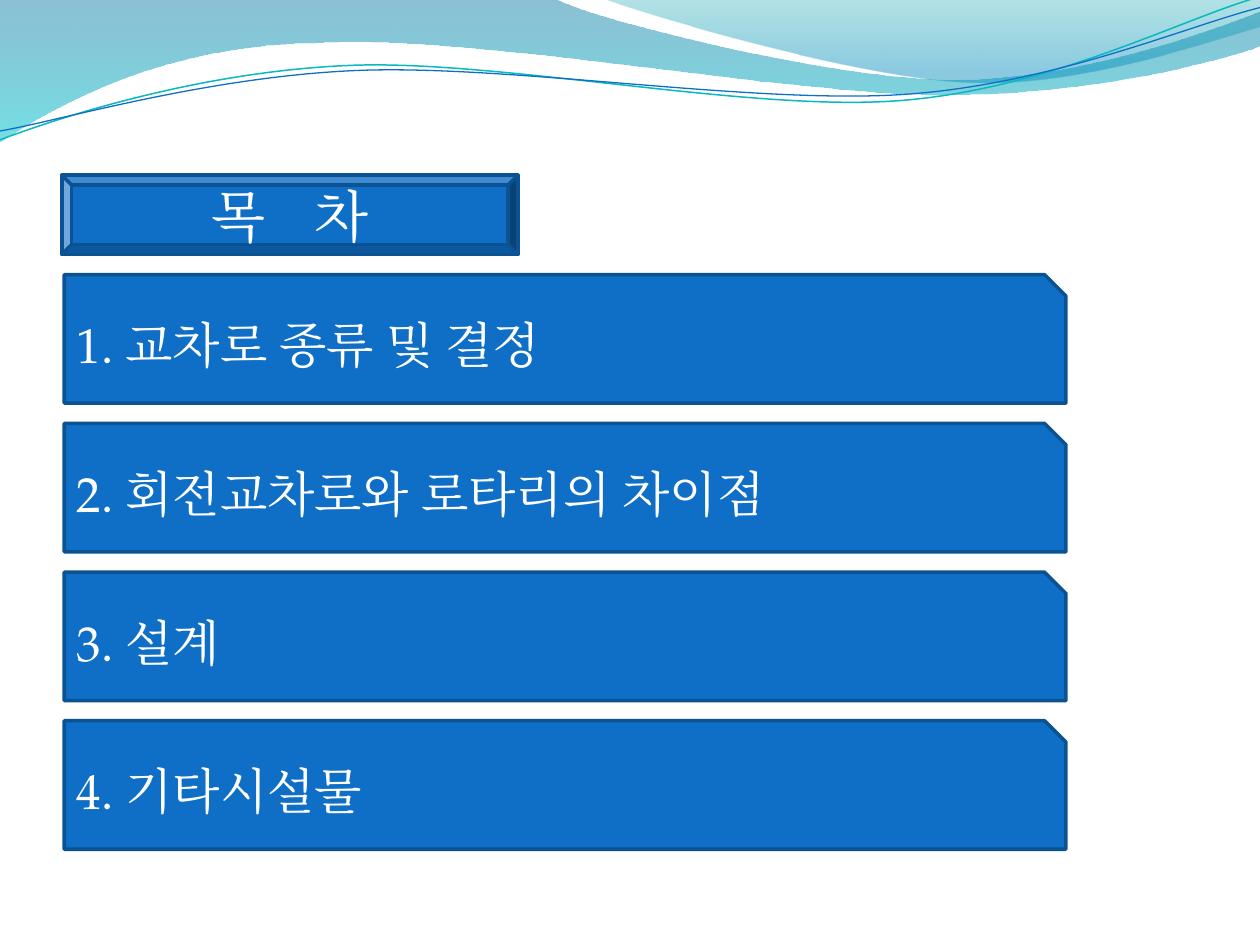
import pptx
import pptx.util
import pptx.dml.color
import pptx.enum.shapes
import pptx.enum.text
import pptx.oxml
import pptx.oxml.ns

Inches = pptx.util.Inches
Pt = pptx.util.Pt
RGBColor = pptx.dml.color.RGBColor
MSO_SHAPE = pptx.enum.shapes.MSO_SHAPE
PP_ALIGN = pptx.enum.text.PP_ALIGN
qn = pptx.oxml.ns.qn
NSDECL = pptx.oxml.ns.nsdecls("a")

FONT = "TeX Gyre Pagella"
WHITE = RGBColor(0xFF, 0xFF, 0xFF)
BLUE = RGBColor(0x0F, 0x6F, 0xC6)
DARK_BLUE = RGBColor(0x0B, 0x52, 0x92)
TEAL = RGBColor(0x0A, 0xB8, 0xBF)
DEEP_SEA = RGBColor(0x00, 0x74, 0xA1)
AQUA = RGBColor(0x00, 0xC6, 0xCF)
SEA_GREEN = RGBColor(0x00, 0xA1, 0xA9)
SKY = RGBColor(0x00, 0x8B, 0xBF)

SLIDE_W, SLIDE_H = 10, 7.5
BAR_LEFT, BAR_TOP, BAR_W, BAR_H = 0.51, 2.18, 7.95, 1.02
BAR_PITCH = 1.18

TOPICS = [
    "1. 교차로 종류 및 결정",
    "2. 회전교차로와 로타리의 차이점",
    "3. 설계",
    "4. 기타시설물",
]

# Wave outlines: a pair is a line end, six numbers are a Bezier segment
BACK_WAVE = [
    (0, -0.01), (4.4, -0.01),
    (4.76, 0.17, 6.64, 0.63, 7.58, 0.63),
    (8.53, 0.63, 9.58, 0.26, 10, 0.09),
    (10.01, 0.36),
    (9.83, 0.44, 8.7, 0.76, 7.46, 0.75),
    (6.22, 0.75, 3.82, 0.28, 2.57, 0.34),
    (1.29, 0.35, 0.46, 0.83, -0.01, 1.13),
]
FRONT_WAVE = [
    (4.79, -0.01),
    (5.09, 0.11, 6.82, 0.62, 7.69, 0.65),
    (8.56, 0.69, 9.61, 0.32, 10, 0.21),
    (10, 0),
]
TEAL_STRAND = [
    (0, 1.11),
    (0.48, 0.93, 1.58, 0.57, 2.77, 0.52),
    (3.95, 0.47, 5.93, 0.89, 7.13, 0.8),
    (8.33, 0.71, 9.38, 0.15, 9.98, -0.02),
]
BLUE_STRAND = [
    (0, 1.04),
    (0.47, 0.96, 1.64, 0.61, 2.83, 0.56),
    (4.03, 0.51, 5.97, 0.83, 7.17, 0.75),
    (8.36, 0.67, 9.41, 0.21, 10, 0.06),
]


def add_outline(slide, outline, close):
    """Build a freeform, then bend its six-number segments into curves."""
    points = [(Inches(x), Inches(y)) for segment in outline
              for x, y in zip(segment[::2], segment[1::2])]
    builder = slide.shapes.build_freeform(*points[0])
    builder.add_line_segments(points[1:], close=close)
    shape = builder.convert_to_shape()
    shape.shadow.inherit = False

    sides = iter(list(shape._element.iter(qn("a:lnTo"))))
    for segment in outline[1:]:
        side = next(sides)
        if len(segment) == 6:
            curve = pptx.oxml.parse_xml(f"<a:cubicBezTo {NSDECL}/>")
            side.addprevious(curve)
            for corner in (side, next(sides), next(sides)):
                curve.append(corner[0])
                corner.getparent().remove(corner)
    return shape


def add_wave(slide, outline, stops):
    wave = add_outline(slide, outline, close=True)
    wave.line.fill.background()
    wave.fill.gradient()
    wave.fill.gradient_angle = 270
    for stop, (position, color, opacity) in zip(wave.fill.gradient_stops, stops):
        stop.position = position
        stop.color.rgb = color
    # Opacity has no public setter
    tints = wave._element.spPr.find(qn("a:gradFill")).iter(qn("a:srgbClr"))
    for tint, (position, color, opacity) in zip(tints, stops):
        tint.append(pptx.oxml.parse_xml(f'<a:alpha {NSDECL} val="{opacity * 1000}"/>'))


def add_strand(slide, outline, color, width):
    strand = add_outline(slide, outline, close=False)
    strand.fill.background()
    strand.line.color.rgb = color
    strand.line.width = Pt(width)


def write(paragraph, text, size=28, color=WHITE, align=PP_ALIGN.JUSTIFY, spacing=None):
    paragraph.alignment = align
    run = paragraph.add_run()
    run.text = text
    run.font.size = Pt(size)
    run.font.name = FONT
    run.font.color.rgb = color
    # East Asian text takes the same font
    run.font._element.append(
        pptx.oxml.parse_xml(f'<a:ea {NSDECL} typeface="{FONT}"/>'))
    if spacing:
        run.font._element.set("spc", str(spacing * 100))


def add_panel(slide, kind, left, top, width, height):
    """Add a blue panel and return its first paragraph."""
    panel = slide.shapes.add_shape(
        kind, Inches(left), Inches(top), Inches(width), Inches(height))
    panel.shadow.inherit = False
    panel.fill.solid()
    panel.fill.fore_color.rgb = BLUE
    panel.line.color.rgb = DARK_BLUE
    panel.line.width = Pt(2)
    panel.text_frame.word_wrap = True
    panel.text_frame.vertical_anchor = pptx.enum.text.MSO_ANCHOR.MIDDLE
    return panel.text_frame.paragraphs[0]


def main():
    deck = pptx.Presentation()
    deck.slide_width, deck.slide_height = Inches(SLIDE_W), Inches(SLIDE_H)
    slide = deck.slides.add_slide(deck.slide_layouts[6])

    # Waves along the top
    add_wave(slide, BACK_WAVE, [(0, DEEP_SEA, 45), (1, AQUA, 55)])
    add_wave(slide, FRONT_WAVE, [(0, SEA_GREEN, 30), (0.8, SKY, 45)])
    add_strand(slide, TEAL_STRAND, TEAL, 0.85)
    add_strand(slide, BLUE_STRAND, BLUE, 0.75)

    # Heading, its two syllables set apart by a widened space
    heading = add_panel(slide, MSO_SHAPE.BEVEL, 0.49, 1.39, 3.62, 0.63)
    for text, spacing in (("목", None), (" ", 20), ("차", None)):
        write(heading, text, size=32, align=PP_ALIGN.CENTER, spacing=spacing)

    # Topic bars
    for row, topic in enumerate(TOPICS):
        bar = add_panel(slide, MSO_SHAPE.SNIP_1_RECTANGLE,
                        BAR_LEFT, BAR_TOP + row * BAR_PITCH, BAR_W, BAR_H)
        write(bar, topic)

    deck.save("out.pptx")


if __name__ == "__main__":
    main()
